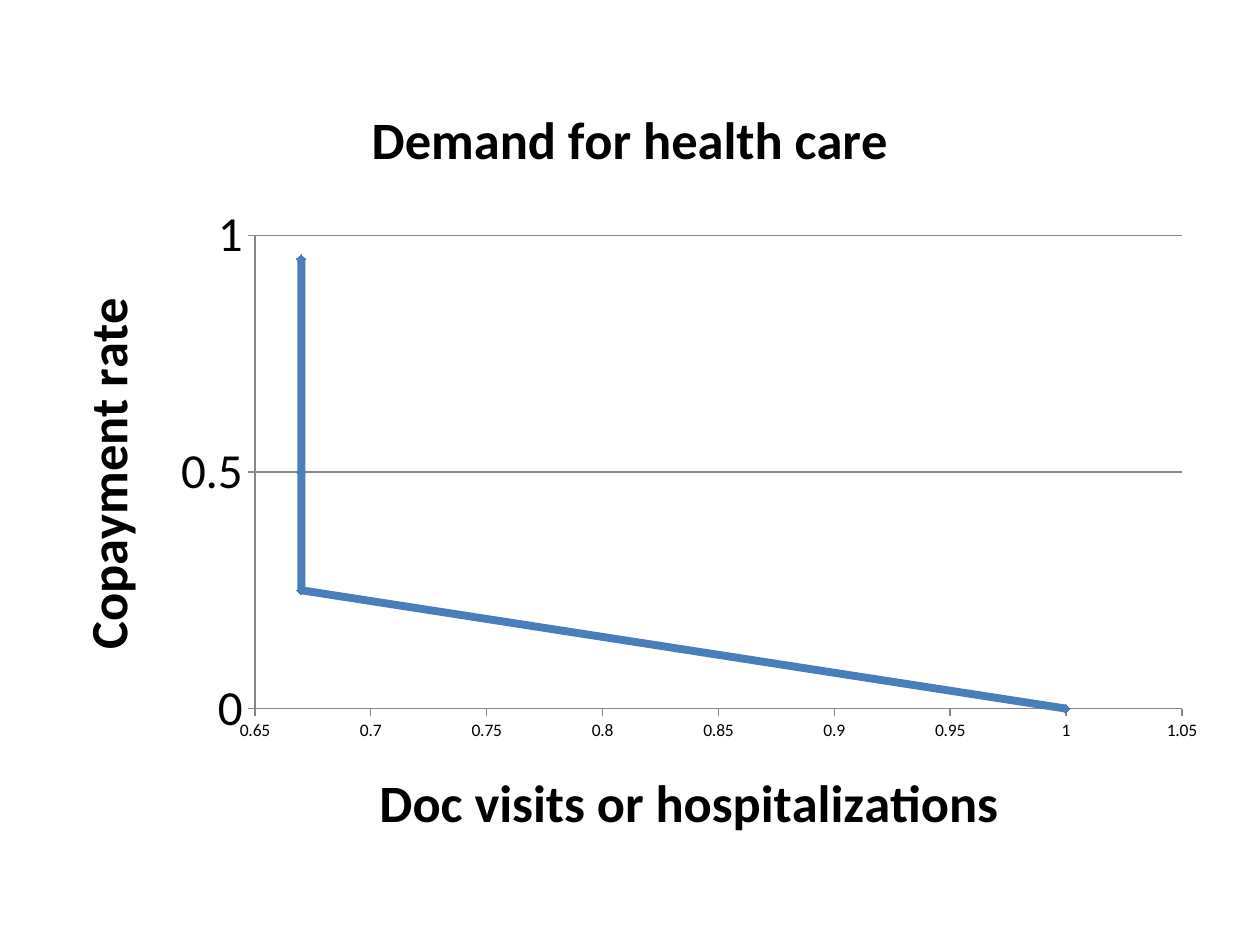
from pptx import Presentation
from pptx.chart.data import XyChartData
from pptx.dml.color import RGBColor
from pptx.enum.chart import XL_CHART_TYPE, XL_MARKER_STYLE, XL_TICK_MARK
from pptx.oxml import parse_xml
from pptx.oxml.ns import nsdecls, qn
from pptx.util import Pt

SCATTER = XL_CHART_TYPE.XY_SCATTER_LINES
DIAMOND = XL_MARKER_STYLE.DIAMOND
OUTSIDE = XL_TICK_MARK.OUTSIDE

FONT = "Calibri"
BLACK, GREY, BLUE, MARKER_BLUE = "000000", "868686", "4A7EBB", "4F81BD"
TITLE = "Demand for health care"
VISITS = "Doc visits or hospitalizations"
COPAYMENT = "Copayment rate"
DEMAND = [(1, 0), (0.67, 0.25), (0.67, 0.5), (0.67, 0.95)]
CHART_WIDTH, CHART_HEIGHT = 675, 458.5
SPANS = {"x": CHART_WIDTH, "y": CHART_HEIGHT, "w": CHART_WIDTH, "h": CHART_HEIGHT}


def color(hex_value):
    return RGBColor.from_string(hex_value)


def style_font(font, size, bold=False):
    font.name = FONT
    font.size = Pt(size)
    font.bold = bold
    font.color.rgb = color(BLACK)


def style_line(line, hex_value, width):
    line.color.rgb = color(hex_value)
    line.width = Pt(width)


def place(element, **parts):
    old = element.find(qn("c:layout"))
    if old is not None:
        element.remove(old)
    target = '<c:layoutTarget val="inner"/>' if "w" in parts else ""
    modes = "".join(f'<c:{key}Mode val="edge"/>' for key in "xy")
    values = "".join(
        f'<c:{key} val="{points / SPANS[key]}"/>' for key, points in parts.items()
    )
    layout = parse_xml(
        f'<c:layout {nsdecls("c")}><c:manualLayout>{target}{modes}{values}'
        "</c:manualLayout></c:layout>"
    )
    element.insert(0 if element.find(qn("c:tx")) is None else 1, layout)


def write_title(title, text, x, y):
    title.text_frame.text = text
    style_font(title.text_frame.paragraphs[0].font, 30, True)
    place(title._element, x=x, y=y)


def style_axis(axis, low, high, step, size, title, x, y):
    axis.minimum_scale, axis.maximum_scale, axis.major_unit = low, high, step
    axis.major_tick_mark = OUTSIDE
    style_font(axis.tick_labels.font, size)
    axis.tick_labels.number_format = "General"
    axis.tick_labels.number_format_is_linked = False
    style_line(axis.format.line, GREY, 0.75)
    write_title(axis.axis_title, title, x, y)


deck = Presentation()
deck.slide_width, deck.slide_height = Pt(720), Pt(540)
slide = deck.slides.add_slide(deck.slide_layouts[6])

data = XyChartData()
series_data = data.add_series("Series 1")
for visits, rate in DEMAND:
    series_data.add_data_point(visits, rate)
chart = slide.shapes.add_chart(
    SCATTER, Pt(22.5), Pt(40.5), Pt(CHART_WIDTH), Pt(CHART_HEIGHT), data
).chart
style_font(chart.font, 10)
chart.has_legend = False
write_title(chart.chart_title, TITLE, 184.5, 13.2)
place(chart._chartSpace.chart.plotArea, x=123.2, y=94, w=529.7, h=270.5)

visits_axis, rate_axis = chart.category_axis, chart.value_axis
style_axis(visits_axis, 0.65, 1.05, 0.05, 10, VISITS, 188.9, 392.1)
style_axis(rate_axis, 0, 1, 0.5, 28, COPAYMENT, 12.8, 124.4)
visits_axis.has_major_gridlines = False
rate_axis.has_major_gridlines = True
style_line(rate_axis.major_gridlines.format.line, GREY, 0.75)
rotation = rate_axis.axis_title.text_frame._txBody.find(qn("a:bodyPr"))
rotation.set("rot", "-5400000")
rotation.set("vert", "horz")

chart.plots[0].vary_by_categories = False
demand = chart.plots[0].series[0]
demand.smooth = False
style_line(demand.format.line, BLUE, 4.5)
demand.marker.style = DIAMOND
demand.marker.size = 5
demand.marker.format.fill.solid()
demand.marker.format.fill.fore_color.rgb = color(MARKER_BLUE)
style_line(demand.marker.format.line, BLUE, 0.75)

deck.save("out.pptx")
